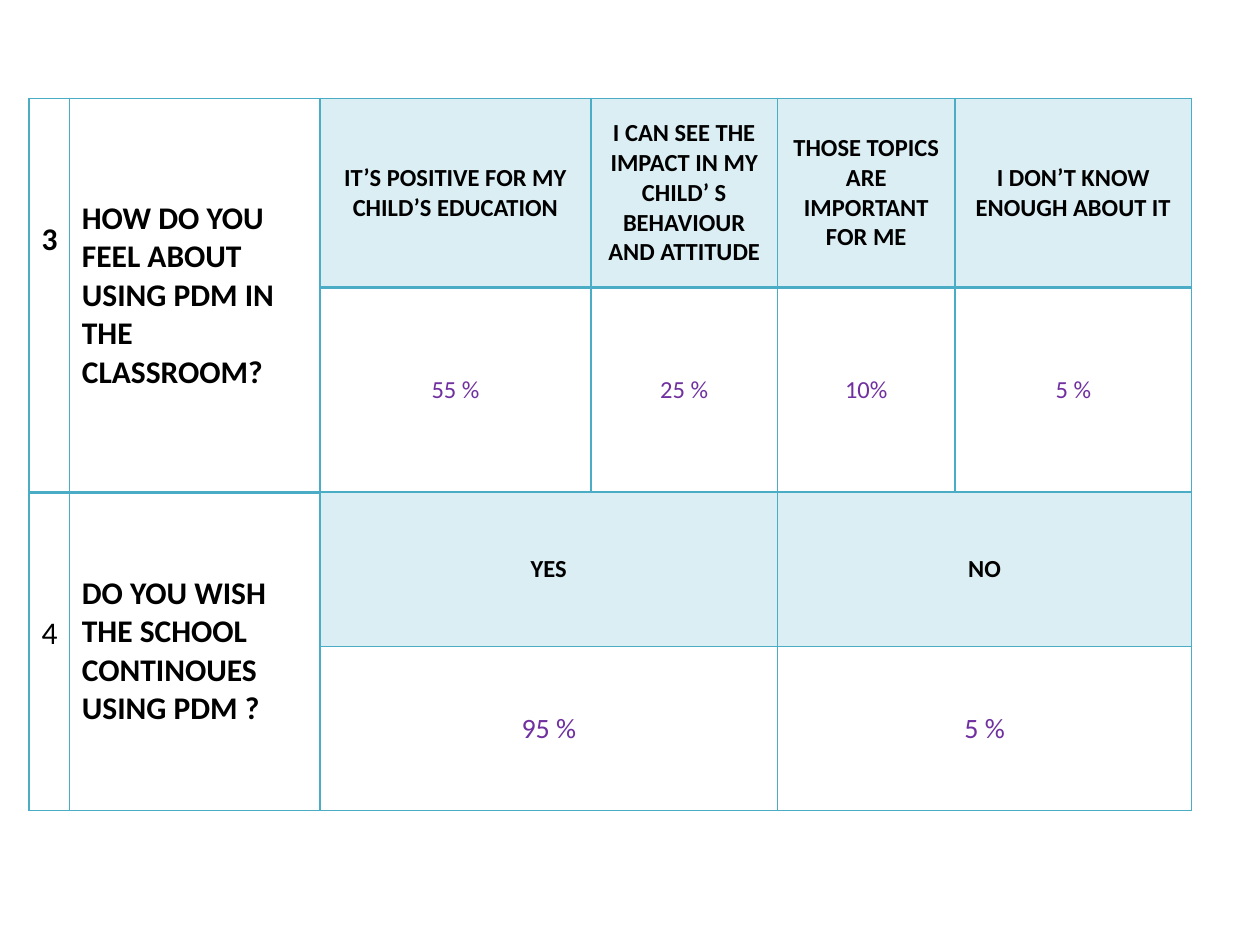
from lxml import etree
from pptx import Presentation
from pptx.dml.color import RGBColor
from pptx.enum.text import MSO_ANCHOR, PP_ALIGN
from pptx.oxml.ns import qn
from pptx.util import Pt

MIDDLE, TOP = MSO_ANCHOR.MIDDLE, MSO_ANCHOR.TOP
LEFT, CENTER = PP_ALIGN.LEFT, PP_ALIGN.CENTER

COLORS = {"border": "4BACC6", "header": "DBEEF4", "text": "000000", "value": "7030A0"}
FONT = "Calibri"
COLUMN_WIDTHS = [23, 143.3, 154.8, 106.6, 101.5, 135.2]
ROW_HEIGHTS = [108, 117, 88.2, 93.6]
NUMBER_TOP = 69.6
FIRST_ANSWER = 2

QUESTIONS = [
    {
        "number": "3", "number_bold": True, "value_size": 14, "span": 1,
        "question": "HOW DO YOU FEEL ABOUT USING PDM IN THE CLASSROOM?",
        "answers": [
            ("IT’S POSITIVE FOR MY CHILD’S EDUCATION", "55 %"),
            ("I CAN SEE THE IMPACT IN MY CHILD’ S BEHAVIOUR AND ATTITUDE", "25 %"),
            ("THOSE TOPICS ARE IMPORTANT FOR ME", "10%"),
            ("I DON’T KNOW ENOUGH ABOUT IT", "5 %"),
        ],
    },
    {
        "number": "4", "number_bold": False, "value_size": 16, "span": 2,
        "question": "DO YOU WISH THE SCHOOL CONTINOUES USING PDM ?",
        "answers": [("YES", "95 %"), ("NO", "5 %")],
    },
]


def write_cell(cell, text, size, bold=True, color="text", align=CENTER, anchor=MIDDLE):
    cell.vertical_anchor = anchor
    paragraph = cell.text_frame.paragraphs[0]
    paragraph.alignment = align
    run = paragraph.add_run()
    run.text = text
    run.font.name = FONT
    run.font.size = Pt(size)
    run.font.bold = bold
    run.font.color.rgb = RGBColor.from_string(COLORS[color])


def border_cell(cell, top, bottom):
    """Draw the four edges; the side edges are always 1 point wide."""
    properties = cell._tc.get_or_add_tcPr()
    edges = [("a:lnL", 1), ("a:lnR", 1), ("a:lnT", top), ("a:lnB", bottom)]
    for index, (tag, width) in enumerate(edges):
        line = etree.Element(qn(tag), w=str(Pt(width)))
        fill = etree.SubElement(line, qn("a:solidFill"))
        etree.SubElement(fill, qn("a:srgbClr"), val=COLORS["border"])
        properties.insert(index, line)


def edge_width(edge, column):
    """Width of the horizontal line above row number edge."""
    thick_edge = 2 if column < FIRST_ANSWER else 1
    return 2 if edge == thick_edge else 1


def fill_question(table, top_row, item):
    number = table.cell(top_row, 0)
    question = table.cell(top_row, 1)
    for column, cell in enumerate((number, question)):
        cell.merge(table.cell(top_row + 1, column))
    number.margin_top = Pt(NUMBER_TOP)
    write_cell(number, item["number"], 18, item["number_bold"], align=LEFT, anchor=TOP)
    write_cell(question, item["question"], 18, align=LEFT)

    span = item["span"]
    for index, (label, value) in enumerate(item["answers"]):
        column = FIRST_ANSWER + index * span
        header = table.cell(top_row, column)
        result = table.cell(top_row + 1, column)
        if span > 1:
            header.merge(table.cell(top_row, column + span - 1))
            result.merge(table.cell(top_row + 1, column + span - 1))
        header.fill.solid()
        header.fill.fore_color.rgb = RGBColor.from_string(COLORS["header"])
        write_cell(header, label, 14)
        write_cell(result, value, item["value_size"], False, "value")


def add_survey_table(slide, left, top):
    frame = slide.shapes.add_table(
        len(ROW_HEIGHTS), len(COLUMN_WIDTHS), Pt(left), Pt(top),
        Pt(sum(COLUMN_WIDTHS)), Pt(sum(ROW_HEIGHTS)))
    table = frame.table
    table.first_row = False
    table.horz_banding = False
    for column, width in zip(table.columns, COLUMN_WIDTHS):
        column.width = Pt(width)
    for row_index, height in enumerate(ROW_HEIGHTS):
        table.rows[row_index].height = Pt(height)
        for column_index in range(len(COLUMN_WIDTHS)):
            cell = table.cell(row_index, column_index)
            cell.fill.background()
            border_cell(cell, edge_width(row_index, column_index),
                        edge_width(row_index + 1, column_index))
    for index, item in enumerate(QUESTIONS):
        fill_question(table, index * 2, item)


def main():
    presentation = Presentation()
    presentation.slide_width = Pt(720)
    presentation.slide_height = Pt(540)
    slide = presentation.slides.add_slide(presentation.slide_layouts[6])
    add_survey_table(slide, 16.6, 56.2)
    presentation.save("out.pptx")


if __name__ == "__main__":
    main()
